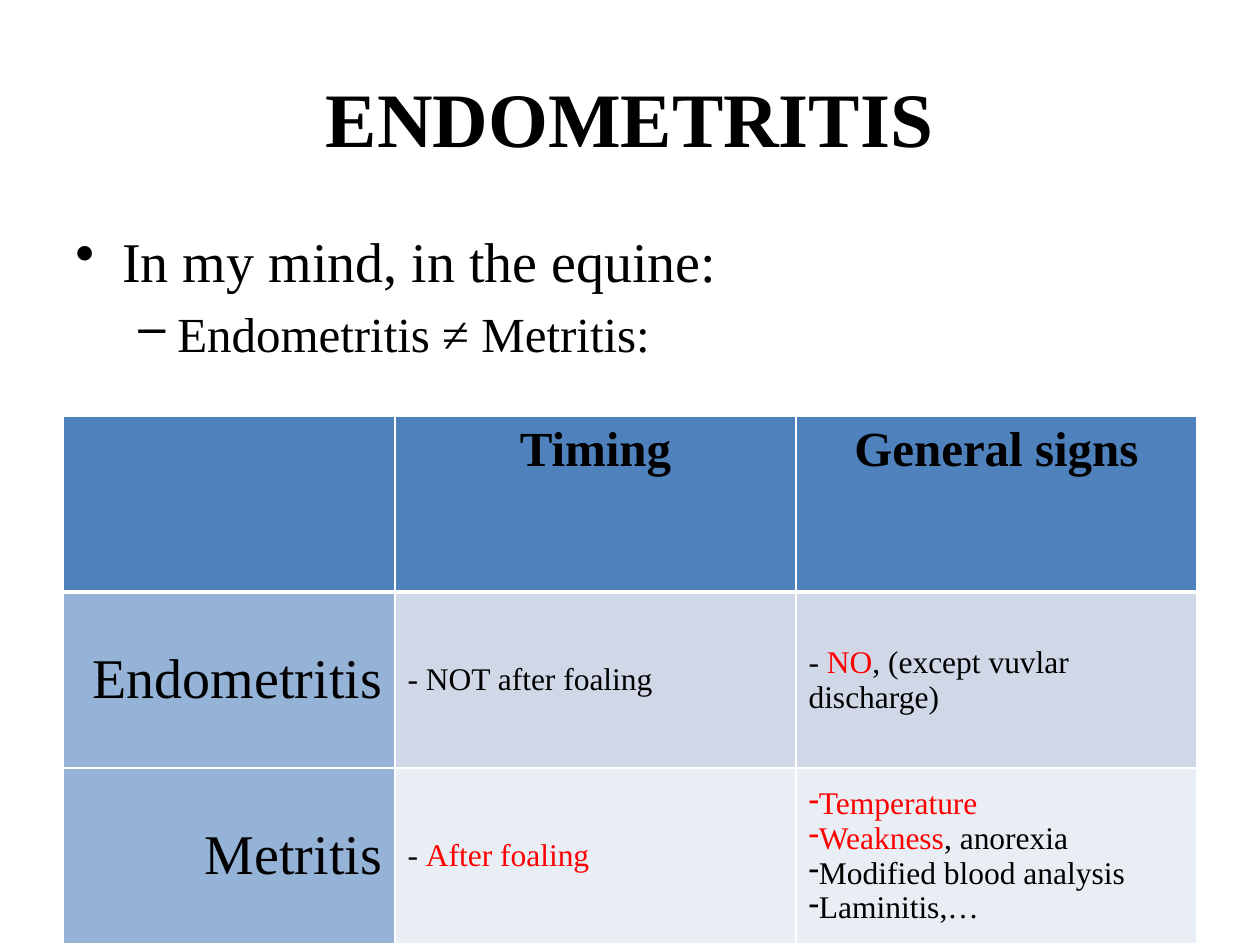
from lxml import etree
from pptx import Presentation
from pptx import util as u
from pptx.dml.color import RGBColor
from pptx.enum import text as t
from pptx.oxml.ns import qn

PX = u.Inches(1) // 126
FONT = "Times New Roman"
BLACK, RED, WHITE = "000000", "FF0000", "FFFFFF"
HEADER, SIDE = "4F81BD", "95B3D7"
BANDS = ["D0D8E8", "E9EDF4"]

COLUMNS = [332, 401, 401]
ROW_HEIGHT = 176
HEADINGS = ["", "Timing", "General signs"]
# Each condition: name, timing and signs; a paragraph is a list of (text, colour)
CONDITIONS = [
    ("Endometritis",
     [[("- NOT after foaling", BLACK)]],
     [[("- ", BLACK), ("NO", RED), (", (except vuvlar discharge)", BLACK)]]),
    ("Metritis",
     [[("- ", BLACK), ("After foaling", RED)]],
     [[("Temperature", RED)],
      [("Weakness", RED), (", anorexia", BLACK)],
      [("Modified blood analysis", BLACK)],
      [("Laminitis,…", BLACK)]]),
]


def px(*lengths):
    return [length * PX for length in lengths]


def colour(code):
    return RGBColor.from_string(code)


def write(paragraph, content, size, fill=BLACK, bold=False,
          align=t.PP_ALIGN.LEFT, before=0):
    paragraph.alignment = align
    paragraph.space_before = u.Pt(before)
    run = paragraph.add_run()
    run.text = content
    run.font.name = FONT
    run.font.size = u.Pt(size)
    run.font.bold = bold
    run.font.color.rgb = colour(fill)


def bullet(paragraph, mark, margin=0, hanging=0):
    props = paragraph._p.get_or_add_pPr()
    props.set("marL", str(margin * PX))
    props.set("indent", str(-hanging * PX))
    etree.SubElement(props, qn("a:buChar"), char=mark)


def border(cell, **widths):
    props = cell._tc.get_or_add_tcPr()
    for side in "LRTB":
        line = etree.SubElement(props, qn("a:ln" + side),
                                w=str(u.Pt(widths.get(side, 1))))
        solid = etree.SubElement(line, qn("a:solidFill"))
        etree.SubElement(solid, qn("a:srgbClr"), val=WHITE)


def style_cell(cell, fill, anchor=t.MSO_ANCHOR.MIDDLE, **widths):
    border(cell, **widths)
    cell.fill.solid()
    cell.fill.fore_color.rgb = colour(fill)
    cell.vertical_anchor = anchor


def add_title(slide):
    title = slide.shapes.title
    title.left, title.top, title.width, title.height = px(63, 38, 1134, 157)
    title.text_frame.vertical_anchor = t.MSO_ANCHOR.MIDDLE
    write(title.text_frame.paragraphs[0], "ENDOMETRITIS", 44, bold=True,
          align=t.PP_ALIGN.CENTER)


def add_points(slide):
    frame = slide.shapes.add_textbox(*px(63, 220, 1134, 196)).text_frame
    frame.word_wrap = True
    point = frame.paragraphs[0]
    write(point, "In my mind, in the equine:", 32, before=6.4)
    bullet(point, "•", 47, 47)
    subpoint = frame.add_paragraph()
    subpoint.level = 1
    write(subpoint, "Endometritis ≠ Metritis:", 28, before=5.6)
    bullet(subpoint, "–", 102, 39)


def fill_findings(cell, findings):
    frame = cell.text_frame
    for index, pieces in enumerate(findings):
        paragraph = frame.add_paragraph() if index else frame.paragraphs[0]
        for content, fill in pieces:
            write(paragraph, content, 18, fill)
        if len(findings) > 1:
            bullet(paragraph, "-")


def add_comparison(slide):
    rows = len(CONDITIONS) + 1
    table = slide.shapes.add_table(
        rows, len(COLUMNS), *px(63, 416, sum(COLUMNS), rows * ROW_HEIGHT)).table
    for column, width in zip(table.columns, COLUMNS):
        column.width = width * PX
    for row in table.rows:
        row.height = ROW_HEIGHT * PX

    # Heading row
    for index, heading in enumerate(HEADINGS):
        cell = table.cell(0, index)
        style_cell(cell, HEADER, t.MSO_ANCHOR.TOP, B=3)
        if heading:
            write(cell.text_frame.paragraphs[0], heading, 28, bold=True,
                  align=t.PP_ALIGN.CENTER)

    # One row for each condition
    for row, (name, *findings) in enumerate(CONDITIONS, 1):
        top = 3 if row == 1 else 1
        name_cell = table.cell(row, 0)
        style_cell(name_cell, SIDE, T=top)
        write(name_cell.text_frame.paragraphs[0], name, 32,
              align=t.PP_ALIGN.RIGHT)
        for column, finding in enumerate(findings, 1):
            cell = table.cell(row, column)
            style_cell(cell, BANDS[row - 1], T=top)
            fill_findings(cell, finding)


def main():
    deck = Presentation()
    deck.slide_width, deck.slide_height = px(1260, 945)
    slide = deck.slides.add_slide(deck.slide_layouts[5])
    add_title(slide)
    add_points(slide)
    add_comparison(slide)
    deck.save("out.pptx")


if __name__ == "__main__":
    main()
